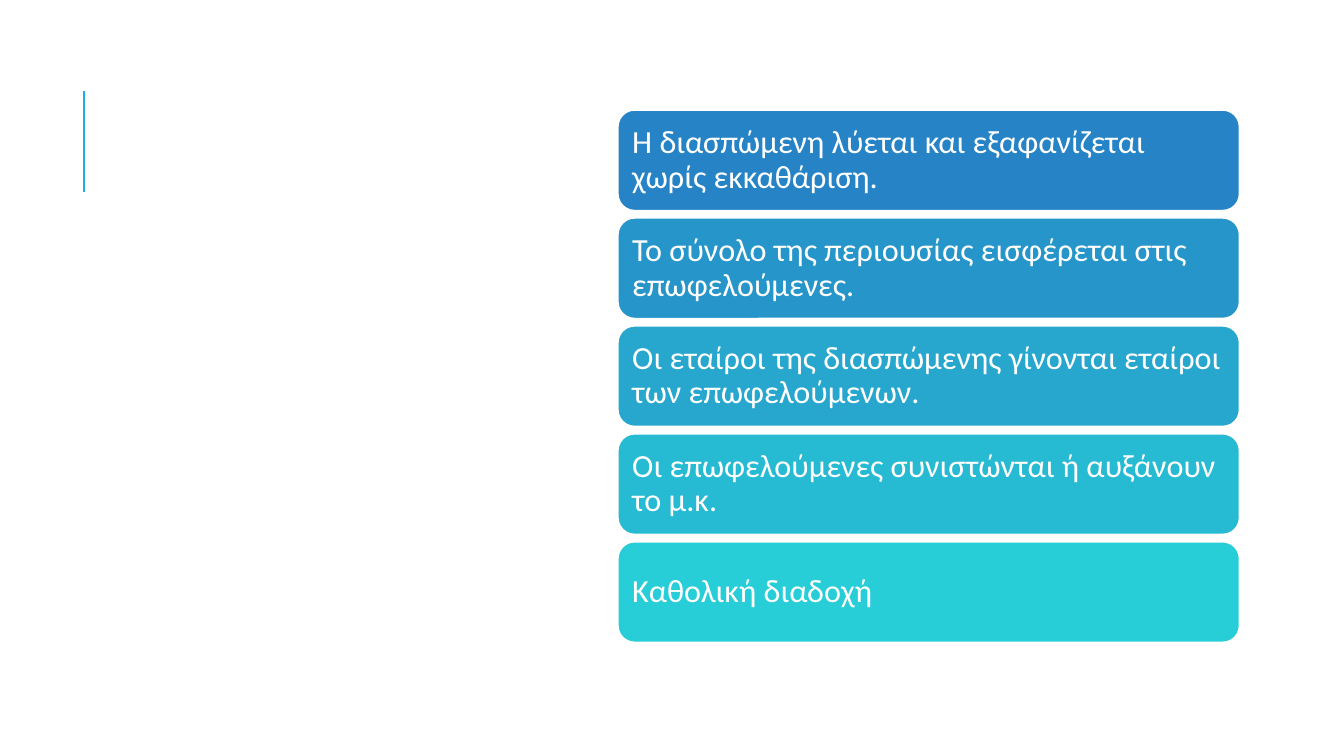
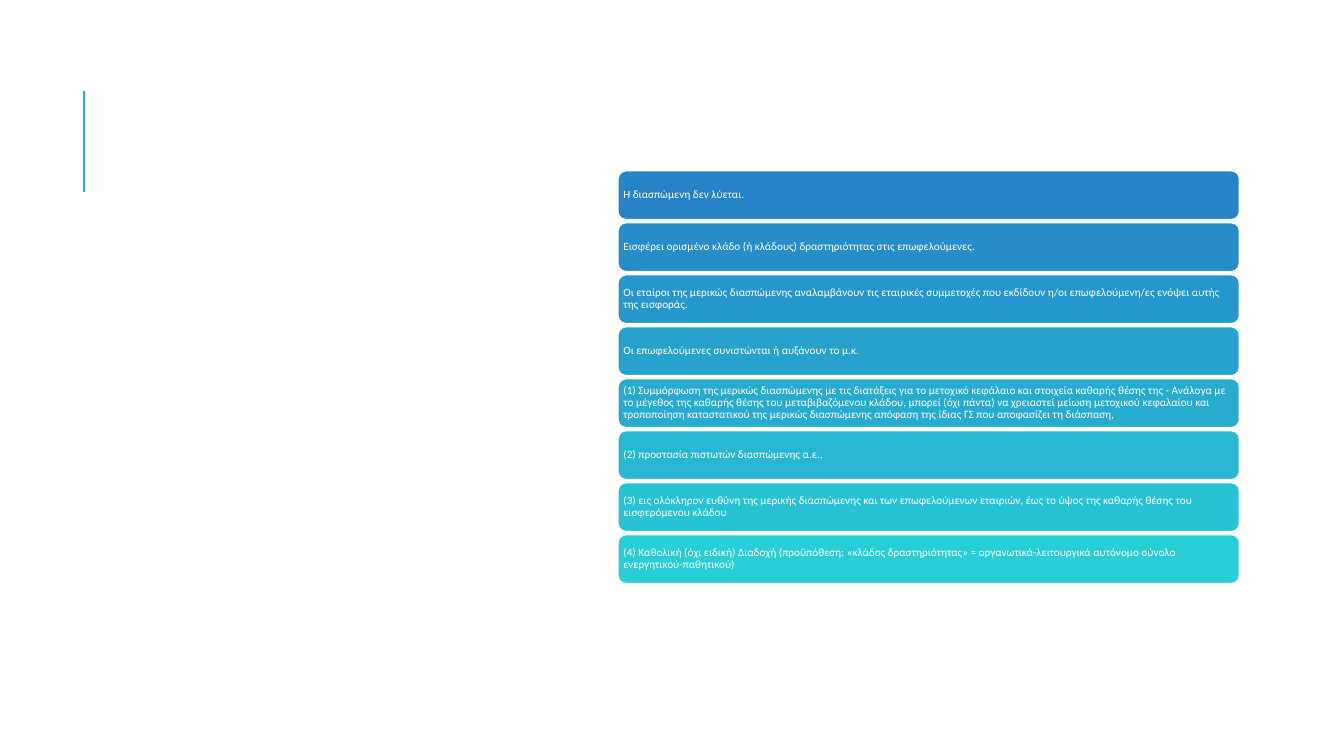
from pptx import Presentation
from pptx import util as u
from pptx.dml.color import RGBColor
from pptx.enum import shapes, text
from pptx.oxml.ns import qn
from lxml import etree

WHITE = "FFFFFF"
ACCENT = "1CADE4"
LEFT, WIDTH = 15.57, 15.67


def rgb(value):
    return RGBColor.from_string(value)


def write(sp, content, size, inset, color=WHITE, font="Calibri", spacing=0.9):
    tf = sp.text_frame
    tf.word_wrap = True
    tf.vertical_anchor = text.MSO_ANCHOR.MIDDLE
    tf.margin_left = tf.margin_right = u.Cm(inset)
    tf.margin_top = tf.margin_bottom = u.Cm(inset)
    p = tf.paragraphs[0]
    p.alignment = text.PP_ALIGN.LEFT
    p.line_spacing = spacing
    r = p.add_run()
    r.text = content
    r.font.size = u.Pt(size)
    r.font.name = font
    r.font.color.rgb = rgb(color)


slides = [
    dict(top=2.77, height=2.54, pitch=2.72, size=23, inset=0.24, items=[
        ("2683C6", "Η διασπώμενη λύεται και εξαφανίζεται χωρίς εκκαθάριση."),
        ("2695CA", "Το σύνολο της περιουσίας εισφέρεται στις επωφελούμενες."),
        ("27A7CE", "Οι εταίροι της διασπώμενης γίνονται εταίροι των επωφελούμενων."),
        ("27BAD3", "Οι επωφελούμενες συνιστώνται ή αυξάνουν το μ.κ."),
        ("27CED7", "Καθολική διαδοχή"),
    ]),
    dict(top=4.3, height=1.24, pitch=1.31, size=8, inset=0.08, items=[
        ("2683C6", "Η διασπώμενη δεν λύεται."),
        ("268DC8", "Εισφέρει ορισμένο κλάδο (ή κλάδους) δραστηριότητας στις επωφελούμενες."),
        ("2697CB", "Οι εταίροι της μερικώς διασπώμενης αναλαμβάνουν τις εταιρικές συμμετοχές "
                   "που εκδίδουν η/οι επωφελούμενη/ες ενόψει αυτής της εισφοράς."),
        ("26A2CD", "Οι επωφελούμενες συνιστώνται ή αυξάνουν το μ.κ."),
        ("27ACD0", "(1) Συμμόρφωση της μερικώς διασπώμενης με τις διατάξεις για το μετοχικό "
                   "κεφάλαιο και στοιχεία καθαρής θέσης της - Ανάλογα με το μέγεθος της καθαρής "
                   "θέσης του μεταβιβαζόμενου κλάδου, μπορεί (όχι πάντα) να χρειαστεί μείωση "
                   "μετοχικού κεφαλαίου και τροποποίηση καταστατικού της μερικώς διασπώμενης "
                   "απόφαση της ίδιας ΓΣ που αποφασίζει τη διάσπαση,"),
        ("27B7D2", "(2) προστασία πιστωτών διασπώμενης α.ε.,"),
        ("27C3D5", "(3) εις ολόκληρον ευθύνη της μερικής διασπώμενης και των επωφελούμενων "
                   "εταιριών, έως το ύψος της καθαρής θέσης του εισφερόμενου κλάδου"),
        ("27CED7", "(4) Καθολική (όχι ειδική) Διαδοχή (προϋπόθεση: «κλάδος δραστηριότητας» = "
                   "οργανωτικά-λειτουργικά αυτόνομο σύνολο ενεργητικού-παθητικού)"),
    ]),
]

prs = Presentation()
prs.slide_width, prs.slide_height = u.Cm(33.87), u.Cm(19.05)

for spec_row in slides:
    s = prs.slides.add_slide(prs.slide_layouts[6])
    rule = s.shapes.add_connector(shapes.MSO_CONNECTOR.STRAIGHT,
                                  u.Cm(2.12), u.Cm(4.83), u.Cm(2.12), u.Cm(2.29))
    rule.line.color.rgb = rgb(ACCENT)
    rule.line.width = u.Pt(1.5)
    etree.SubElement(rule.line._get_or_add_ln().getparent(), qn("a:effectLst"))

    for i, (fill, content) in enumerate(spec_row["items"]):
        top = spec_row["top"] + i * spec_row["pitch"]
        sp = s.shapes.add_shape(shapes.MSO_SHAPE.ROUNDED_RECTANGLE, u.Cm(LEFT), u.Cm(top),
                                u.Cm(WIDTH), u.Cm(spec_row["height"]))
        sp.shadow.inherit = False
        sp.fill.solid()
        sp.fill.fore_color.rgb = rgb(fill)
        sp.line.color.rgb = rgb(WHITE)
        sp.line.width = u.Pt(1.25)
        write(sp, content, spec_row["size"], spec_row["inset"])

prs.save("out.pptx")
